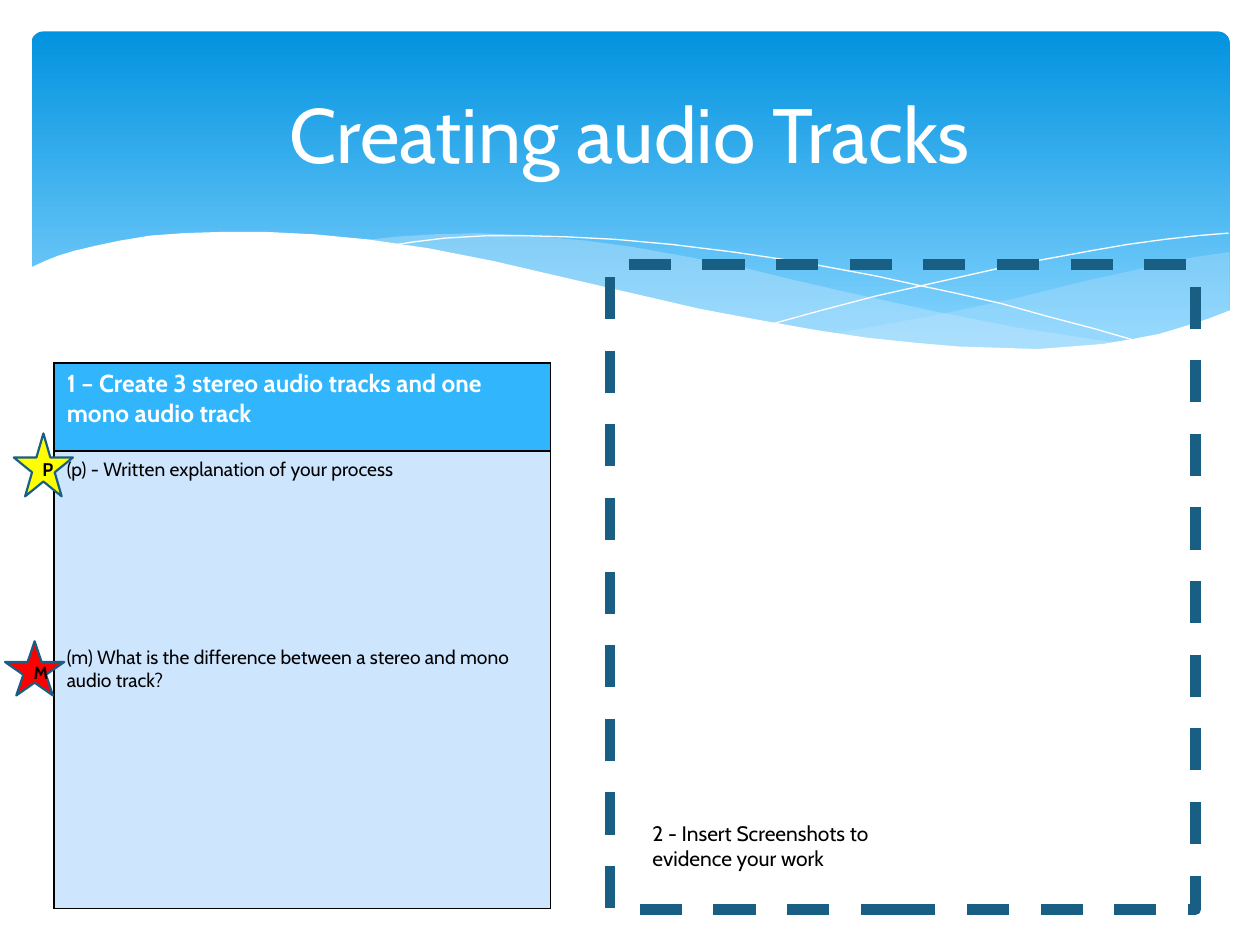
from lxml.etree import SubElement
from pptx import Presentation
from pptx.dml.color import RGBColor
from pptx.enum.dml import MSO_LINE
from pptx.enum.shapes import MSO_SHAPE
from pptx.enum.text import MSO_ANCHOR, MSO_AUTO_SIZE, PP_ALIGN
from pptx.oxml import parse_xml
from pptx.oxml.ns import nsdecls, qn
from pptx.util import Inches, Pt

WHITE = RGBColor(0xFF, 0xFF, 0xFF)
BLACK = RGBColor(0x00, 0x00, 0x00)
BANNER_TOP = RGBColor(0x02, 0x93, 0xE0)
BANNER_BOTTOM = RGBColor(0x83, 0xD3, 0xFE)
WAVE = RGBColor(0xC6, 0xE7, 0xFC)
HEADER = RGBColor(0x31, 0xB6, 0xFD)
BODY = RGBColor(0xCE, 0xE5, 0xFE)
OUTLINE = RGBColor(0x19, 0x5F, 0x84)
RED = RGBColor(0xFF, 0x00, 0x00)
YELLOW = RGBColor(0xFF, 0xFF, 0x00)

RIGHT_WAVE = [
    (9.76, 2), (9.48, 2.04), (9.21, 2.1), (8.61, 2.23), (8.05, 2.37), (7.53, 2.48),
    (7.06, 2.57), (6.61, 2.65), (6.91, 2.69), (7.19, 2.72), (7.45, 2.75), (7.69, 2.77),
    (8.03, 2.78), (8.35, 2.77), (8.63, 2.75), (8.89, 2.72), (9.13, 2.67), (9.35, 2.62),
    (9.63, 2.52), (9.76, 2.47),
]
MIDDLE_WAVE = [
    (8.93, 2.73), (8.66, 2.69), (8.07, 2.6), (7.41, 2.47), (6.68, 2.31), (6.29, 2.22),
    (5.84, 2.11), (5.41, 2.03), (5.02, 1.96), (4.65, 1.91), (4.2, 1.87), (3.8, 1.85),
    (3.44, 1.86), (3.13, 1.88), (2.86, 1.91), (3.23, 1.96), (3.62, 2.03), (4.04, 2.11),
    (4.49, 2.22), (4.91, 2.32), (5.66, 2.48), (6.18, 2.58), (6.65, 2.66), (7.09, 2.72),
    (7.48, 2.76), (7.85, 2.78), (8.28, 2.78), (8.57, 2.77),
]
FALLING_LINE = [
    (3.09, 1.95), (3.28, 1.92), (3.53, 1.89), (3.87, 1.87), (4.16, 1.87), (4.5, 1.88),
    (4.89, 1.9), (5.33, 1.94), (5.82, 2), (6.36, 2.08), (6.95, 2.19), (7.27, 2.26),
    (7.6, 2.33), (7.95, 2.41), (8.31, 2.51), (8.69, 2.61), (9.07, 2.72),
]
RISING_LINE = [
    (6.13, 2.57), (6.53, 2.46), (6.95, 2.35), (7.48, 2.23), (8.06, 2.1), (8.66, 1.99),
    (8.95, 1.94), (9.24, 1.9), (9.51, 1.87), (9.75, 1.85),
]
WHITE_WAVE = [
    (9.77, 2.46), (9.59, 2.53), (9.4, 2.59), (9.2, 2.65), (8.99, 2.69), (8.75, 2.73),
    (8.5, 2.75), (8.23, 2.77), (7.93, 2.76), (7.61, 2.75), (7.26, 2.72), (6.88, 2.68),
    (6.48, 2.62), (6.03, 2.54), (5.55, 2.45), (5.03, 2.33), (4.47, 2.2), (3.91, 2.07),
    (3.4, 1.97), (2.92, 1.9), (2.5, 1.86), (2.11, 1.84), (1.77, 1.84), (1.46, 1.85),
    (1.19, 1.87), (0.95, 1.91), (0.76, 1.95), (0.59, 1.99), (0.46, 2.03), (0.36, 2.07),
    (0.23, 2.13), (0.23, 3.29), (9.77, 3.29),
]


class SlideBuilder:
    font = "Cabin"

    def __init__(self, slide):
        self.slide = slide

    def fill_text(self, text_frame, lines, size, color=BLACK, bold=False, align=PP_ALIGN.LEFT):
        text_frame.text = "\n".join(lines)
        for paragraph in text_frame.paragraphs:
            paragraph.alignment = align
            for run in paragraph.runs:
                run.font.name = self.font
                run.font.size = Pt(size)
                run.font.bold = bold
                run.font.color.rgb = color

    def shape(self, kind, left, top, width, height, fill=None, line=None, line_width=1):
        shape = self.slide.shapes.add_shape(
            kind, Inches(left), Inches(top), Inches(width), Inches(height))
        self.paint(shape, fill, line, line_width)
        return shape

    def paint(self, shape, fill, line, line_width):
        shape.shadow.inherit = False
        if fill is None:
            shape.fill.background()
        else:
            shape.fill.solid()
            shape.fill.fore_color.rgb = fill
        if line is None:
            shape.line.fill.background()
        else:
            shape.line.color.rgb = line
            shape.line.width = Pt(line_width)

    def banner(self, left, top, width, height):
        shape = self.shape(MSO_SHAPE.ROUNDED_RECTANGLE, left, top, width, height)
        shape.adjustments[0] = 0.034
        shape.fill.gradient()
        shape.fill.gradient_angle = 270
        stops = shape.fill.gradient_stops
        for stop, color, position in zip(stops, (BANNER_TOP, BANNER_BOTTOM), (0, 0.9)):
            stop.color.rgb = color
            stop.position = position

    def curve(self, points, fill=None, line=None, opacity=100):
        start, *rest = [(Inches(x), Inches(y)) for x, y in points]
        builder = self.slide.shapes.build_freeform(*start)
        builder.add_line_segments(rest, close=fill is not None)
        shape = builder.convert_to_shape()
        self.paint(shape, fill, line, 0)
        if opacity < 100:
            color = shape._element.spPr.find(qn("a:solidFill"))[0]
            SubElement(color, qn("a:alpha")).set("val", str(opacity * 1000))

    def text(self, left, top, width, height, line, size, **style):
        box = self.slide.shapes.add_textbox(
            Inches(left), Inches(top), Inches(width), Inches(height))
        box.text_frame.word_wrap = True
        self.fill_text(box.text_frame, [line], size, **style)
        return box.text_frame

    def star(self, left, top, width, height, letter, size, fill):
        shape = self.shape(MSO_SHAPE.STAR_5_POINT, left, top, width, height, fill, OUTLINE, 1.25)
        shape.text_frame.vertical_anchor = MSO_ANCHOR.MIDDLE
        self.fill_text(shape.text_frame, [letter], size, bold=True, align=PP_ALIGN.CENTER)

    def table(self, left, top, width, row_heights):
        frame = self.slide.shapes.add_table(
            len(row_heights), 1, Inches(left), Inches(top), Inches(width),
            Inches(sum(row_heights)))
        for row, height in zip(frame.table.rows, row_heights):
            row.height = Inches(height)
        return frame.table

    def cell(self, cell, lines, size, fill, **style):
        cell.fill.solid()
        cell.fill.fore_color.rgb = fill
        properties = cell._tc.get_or_add_tcPr()
        for index, side in enumerate("LRTB"):
            properties.insert(index, parse_xml(
                f'<a:ln{side} {nsdecls("a")} w="12700"><a:solidFill>'
                f'<a:srgbClr val="{BLACK}"/></a:solidFill></a:ln{side}>'))
        self.fill_text(cell.text_frame, lines, size, **style)


def main():
    presentation = Presentation()
    presentation.slide_width = Inches(10)
    presentation.slide_height = Inches(7.5)
    builder = SlideBuilder(presentation.slides.add_slide(presentation.slide_layouts[6]))

    builder.banner(0.25, 0.25, 9.51, 2.7)
    builder.curve(RIGHT_WAVE, fill=WAVE, opacity=29)
    builder.curve(MIDDLE_WAVE, fill=WAVE, opacity=40)
    builder.curve(FALLING_LINE, line=WHITE)
    builder.curve(RISING_LINE, line=WHITE)
    builder.curve(WHITE_WAVE, fill=WHITE)

    title = builder.text(0.5, 0.37, 9, 1.37, "Creating audio Tracks", 44,
                         color=WHITE, align=PP_ALIGN.CENTER)
    title.vertical_anchor = MSO_ANCHOR.MIDDLE

    table = builder.table(0.43, 2.88, 3.94, [0.7, 3.63])
    builder.cell(table.cell(0, 0), ["1 – Create 3 stereo audio tracks and one mono audio track"],
                 14, HEADER, color=WHITE, bold=True)
    tasks = table.cell(1, 0)
    builder.cell(tasks, ["(p) - Written explanation of your process",
                         "(m) What is the difference between a stereo and mono audio track?"],
                 11, BODY)
    tasks.text_frame.paragraphs[1].space_before = Pt(94)

    frame = builder.shape(MSO_SHAPE.RECTANGLE, 4.84, 2.1, 4.65, 5.12, line=OUTLINE, line_width=6)
    frame.line.dash_style = MSO_LINE.DASH
    caption = builder.text(5.08, 6.46, 2.36, 0.5, "2 - Insert Screenshots to evidence your work", 12)
    caption.auto_size = MSO_AUTO_SIZE.SHAPE_TO_FIT_TEXT

    builder.star(0.04, 5.09, 0.47, 0.43, "M", 10, RED)
    builder.star(0.11, 3.44, 0.47, 0.5, "P", 10.5, YELLOW)
    presentation.save("out.pptx")


if __name__ == "__main__":
    main()
